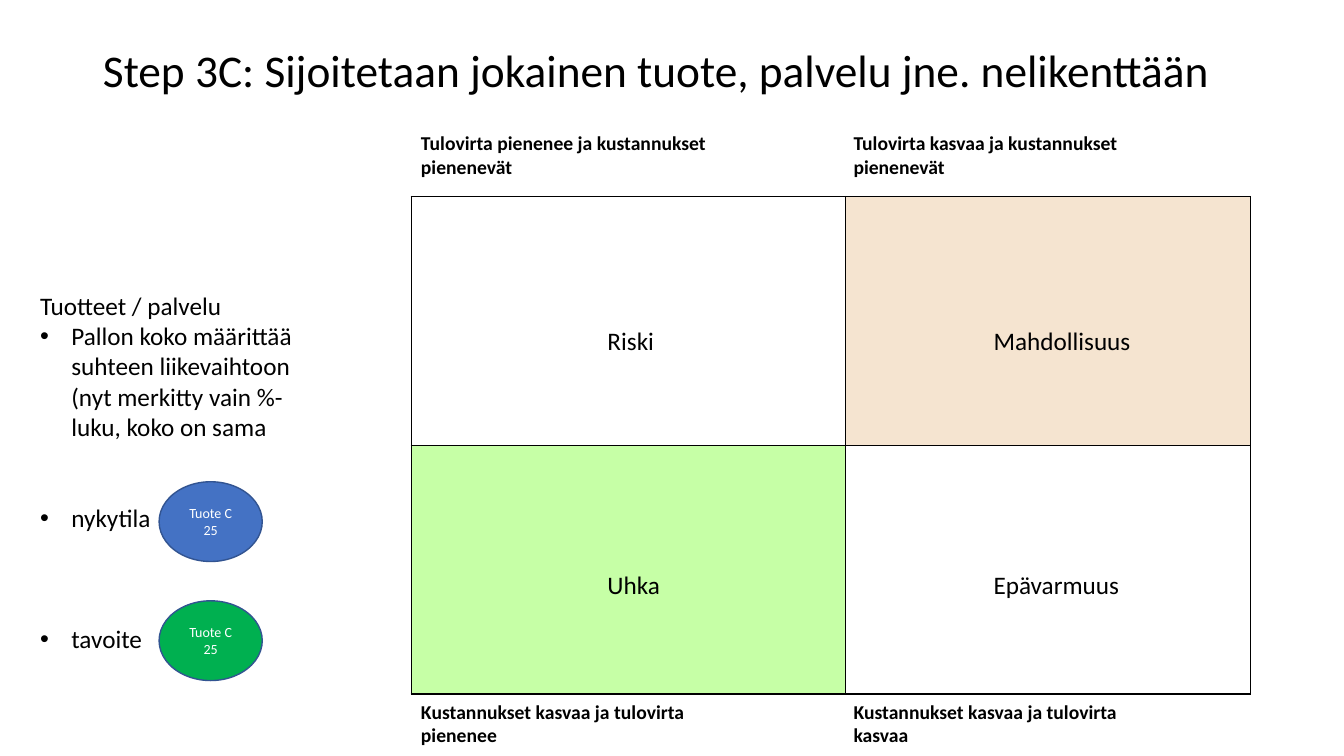
from dataclasses import dataclass

from lxml import etree
from pptx import Presentation
from pptx.dml.color import RGBColor
from pptx.enum.shapes import MSO_SHAPE
from pptx.enum.text import MSO_ANCHOR, MSO_AUTO_SIZE, PP_ALIGN
from pptx.oxml.ns import qn
from pptx.util import Cm, Pt

ELLIPSE = MSO_SHAPE.OVAL
MIDDLE = MSO_ANCHOR.MIDDLE
LEFT, CENTER = PP_ALIGN.LEFT, PP_ALIGN.CENTER
NO_AUTOFIT = MSO_AUTO_SIZE.NONE


@dataclass(frozen=True)
class Theme:
    font: str = "Calibri"
    text: str = "000000"
    inverse: str = "FFFFFF"
    outline: str = "325491"
    current: str = "4472C4"
    target: str = "00B050"
    opportunity: str = "F5E4D0"
    threat: str = "C6FFA6"
    title_size: float = 32.4
    body_size: float = 18
    label_size: float = 14
    ball_size: float = 10


THEME = Theme()


@dataclass(frozen=True)
class Label:
    text: str
    x: float
    y: float
    w: float
    h: float
    size: float
    bold: bool = False
    wrap: bool = True


@dataclass(frozen=True)
class Ball:
    y: float
    fill: str


@dataclass(frozen=True)
class Note:
    text: str
    bullet: bool = True
    space_before: float = 0


GRID_X, GRID_Y = 10.36, 4.95
COL_WIDTHS = (10.95, 10.21)
ROW_HEIGHT = 6.27
GRID_FILLS = ((None, THEME.opportunity), (THEME.threat, None))

EDGE_X = (GRID_X, 21.26)
EDGE_Y = (3.18, 17.5)
EDGE_TEXTS = (
    (("Tulovirta pienenee ja kustannukset pienenevät", 9.63),
     ("Tulovirta kasvaa ja kustannukset pienenevät", 8.69)),
    (("Kustannukset kasvaa ja tulovirta pienenee", 7.98),
     ("Kustannukset kasvaa ja tulovirta kasvaa", 8.0)),
)
QUADRANT_X = (15.06, 24.79)
QUADRANT_Y = (8.08, 14.22)
QUADRANT_TEXTS = (
    (("Riski", 1.7), ("Mahdollisuus", 3.99)),
    (("Uhka", 1.85), ("Epävarmuus", 3.71)),
)
LABELS = [
    Label(text, x, y, w, 1.45, THEME.label_size, bold=True)
    for y, row in zip(EDGE_Y, EDGE_TEXTS)
    for x, (text, w) in zip(EDGE_X, row)
] + [
    Label(text, x, y, w, 1.02, THEME.body_size, wrap=False)
    for y, row in zip(QUADRANT_Y, QUADRANT_TEXTS)
    for x, (text, w) in zip(QUADRANT_X, row)
]

BALLS = (Ball(12.14, THEME.current), Ball(15.14, THEME.target))
NOTES = (
    Note("Tuotteet / palvelu", bullet=False),
    Note("Pallon koko määrittää suhteen liikevaihtoon "
         "(nyt merkitty vain %-luku, koko on sama"),
    Note("nykytila", space_before=43.5),
    Note("tavoite", space_before=65),
)


def rgb(color: str) -> RGBColor:
    return RGBColor.from_string(color)


def style(p, size: float, color: str = THEME.text, bold: bool = False) -> None:
    p.font.name = THEME.font
    p.font.size = Pt(size)
    p.font.bold = bold
    p.font.color.rgb = rgb(color)


def add_title(slide, text: str) -> None:
    title = slide.shapes.title
    title.left, title.top = Cm(2.34), Cm(1.02)
    title.width, title.height = Cm(29.21), Cm(1.65)
    tf = title.text_frame
    tf.text = text
    tf.auto_size = NO_AUTOFIT
    tf.vertical_anchor = MIDDLE
    p = tf.paragraphs[0]
    p.alignment = LEFT
    p.line_spacing = 0.9
    style(p, THEME.title_size)


def set_borders(cell) -> None:
    """Draw a thin line on all four sides; borders must precede the fill."""
    props = cell._tc.get_or_add_tcPr()
    for i, side in enumerate(("a:lnL", "a:lnR", "a:lnT", "a:lnB")):
        line = etree.Element(qn(side), w=str(Pt(1)))
        fill = etree.SubElement(line, qn("a:solidFill"))
        etree.SubElement(fill, qn("a:srgbClr"), val=THEME.text)
        props.insert(i, line)


def add_grid(slide) -> None:
    table = slide.shapes.add_table(
        len(GRID_FILLS), len(COL_WIDTHS), Cm(GRID_X), Cm(GRID_Y),
        Cm(sum(COL_WIDTHS)), Cm(ROW_HEIGHT * len(GRID_FILLS))).table
    table.first_row = table.horz_banding = False
    for column, width in zip(table.columns, COL_WIDTHS):
        column.width = Cm(width)
    for r, fills in enumerate(GRID_FILLS):
        table.rows[r].height = Cm(ROW_HEIGHT)
        for c, color in enumerate(fills):
            cell = table.cell(r, c)
            if color:
                cell.fill.solid()
                cell.fill.fore_color.rgb = rgb(color)
            else:
                cell.fill.background()
            set_borders(cell)


def add_notes_list(slide) -> None:
    tf = slide.shapes.add_textbox(Cm(0.76), Cm(7.19), Cm(7.42), Cm(10.26)).text_frame
    tf.word_wrap = True
    for i, note in enumerate(NOTES):
        p = tf.add_paragraph() if i else tf.paragraphs[0]
        p.text = note.text
        p.space_before = Pt(note.space_before)
        style(p, THEME.body_size)
        if note.bullet:
            props = p._p.get_or_add_pPr()
            props.set("marL", str(Cm(0.79)))
            props.set("indent", str(-Cm(0.79)))
            bullet_font = etree.Element(qn("a:buFont"), typeface="Arial")
            bullet = etree.Element(qn("a:buChar"), char="•")
            default_run = props.find(qn("a:defRPr"))
            default_run.addprevious(bullet_font)
            default_run.addprevious(bullet)


def add_ball(slide, ball: Ball) -> None:
    sp = slide.shapes.add_shape(ELLIPSE, Cm(4.01), Cm(ball.y), Cm(2.6), Cm(2.01))
    sp.shadow.inherit = False
    sp.fill.solid()
    sp.fill.fore_color.rgb = rgb(ball.fill)
    sp.line.color.rgb = rgb(THEME.outline)
    sp.line.width = Pt(1)
    tf = sp.text_frame
    tf.text = "Tuote C\n25"
    tf.vertical_anchor = MIDDLE
    for p in tf.paragraphs:
        p.alignment = CENTER
        style(p, THEME.ball_size, THEME.inverse)


def add_label(slide, label: Label) -> None:
    tf = slide.shapes.add_textbox(
        Cm(label.x), Cm(label.y), Cm(label.w), Cm(label.h)).text_frame
    tf.word_wrap = label.wrap
    tf.text = label.text
    style(tf.paragraphs[0], label.size, bold=label.bold)


def main() -> None:
    prs = Presentation()
    prs.slide_width, prs.slide_height = Cm(33.87), Cm(19.05)
    slide = prs.slides.add_slide(prs.slide_layouts.get_by_name("Title Only"))
    add_title(slide, "Step 3C: Sijoitetaan jokainen tuote, palvelu jne. nelikenttään")
    add_grid(slide)
    add_notes_list(slide)
    for ball in BALLS:
        add_ball(slide, ball)
    for label in LABELS:
        add_label(slide, label)
    prs.save("out.pptx")


if __name__ == "__main__":
    main()
